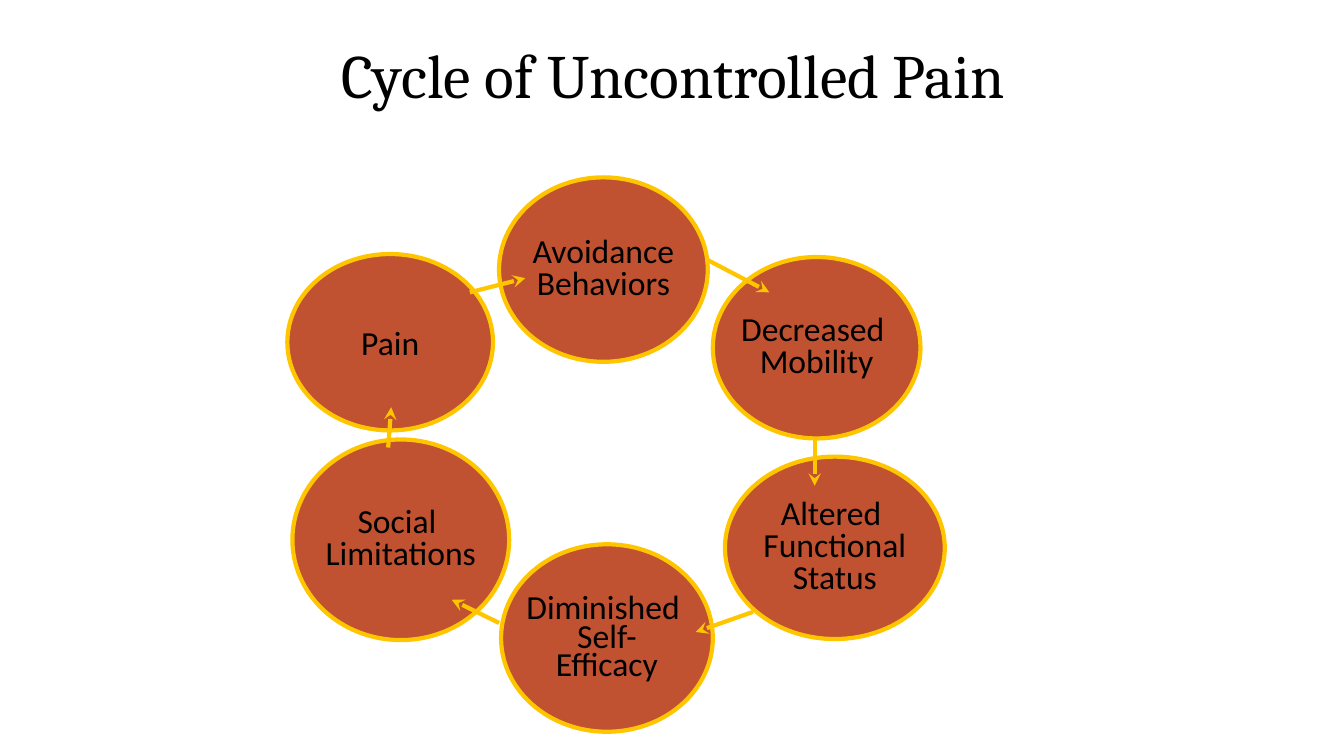
"""Build the slide that shows the cycle of uncontrolled pain."""
import pptx
import pptx.util
import pptx.dml.color
import pptx.enum.shapes
import pptx.enum.text
import lxml.etree

Inches, Pt = pptx.util.Inches, pptx.util.Pt
Color = pptx.dml.color.RGBColor
Align = pptx.enum.text.PP_ALIGN
Anchor = pptx.enum.text.MSO_ANCHOR
Shape = pptx.enum.shapes.MSO_SHAPE
theme = {
    "ink": Color.from_string("000000"),
    "rust": Color.from_string("C05131"),
    "gold": Color.from_string("FFC600"),
    "head": {"name": "Cambria", "size": Pt(44)},
    "body": {"name": "Calibri", "size": Pt(24)},
    "line": Pt(3),
}


def style(para, font, **form):
    """Format one paragraph and its font."""
    for key, value in form.items():
        setattr(para, key, value)
    for run in para.runs:
        for key, value in theme[font].items():
            setattr(run.font, key, value)
        run.font.color.rgb = theme["ink"]


def stroke(line):
    """Give a line the theme colour and width."""
    line.color.rgb = theme["gold"]
    line.width = theme["line"]


deck = pptx.Presentation()
deck.slide_width, deck.slide_height = Inches(13.33), Inches(7.5)
slide = deck.slides.add_slide(deck.slide_layouts[5])

title = slide.shapes.title
place = {"left": 3.29, "top": 0.42, "width": 7.58, "height": 1.45}
for key, value in place.items():
    setattr(title, key, Inches(value))
title.text_frame.text = "Cycle of Uncontrolled Pain\v"
title.text_frame.auto_size = pptx.enum.text.MSO_AUTO_SIZE.NONE
title.text_frame.vertical_anchor = Anchor.MIDDLE
style(title.text_frame.paragraphs[0], "head", alignment=Align.LEFT, line_spacing=0.9)

stages = [
    ("Pain", (2.85, 2.52, 2.04, 1.75), [1.0]),
    ("Altered \nFunctional\nStatus", (7.19, 4.53, 2.18, 1.81), [0.8, 0.8, 0.8]),
    ("Decreased \nMobility", (7.07, 2.55, 2.06, 1.8), [0.8, 0.8]),
    ("Avoidance\nBehaviors", (4.95, 1.76, 2.07, 1.83), [0.8, 0.8]),
    ("Social \nLimitations", (2.9, 4.36, 2.15, 1.99), [0.8, 0.8]),
    ("Diminished \nSelf-\nEfficacy", (4.97, 5.4, 2.1, 1.86), [0.8, 0.7, 0.7]),
]
for label, box, gaps in stages:
    oval = slide.shapes.add_shape(Shape.OVAL, *map(Inches, box))
    oval.shadow.inherit = False
    oval.fill.solid()
    oval.fill.fore_color.rgb = theme["rust"]
    stroke(oval.line)
    frame = oval.text_frame
    frame.word_wrap = False
    frame.vertical_anchor = Anchor.MIDDLE
    frame.text = label
    for para, gap in zip(frame.paragraphs, gaps):
        style(para, "body", alignment=Align.CENTER, line_spacing=gap)

arrows = [
    (7.02, 2.58, 7.63, 2.9),
    (8.08, 4.36, 8.08, 4.82),
    (3.85, 4.44, 3.88, 4.04),
    (4.95, 6.18, 4.48, 5.95),
    (4.66, 2.9, 5.21, 2.76),
    (7.47, 6.07, 6.9, 6.27),
]
for ends in arrows:
    arrow = slide.shapes.add_connector(
        pptx.enum.shapes.MSO_CONNECTOR.STRAIGHT, *map(Inches, ends))
    stroke(arrow.line)
    props = arrow.line._get_or_add_ln()
    tip = lxml.etree.SubElement(props, pptx.oxml.ns.qn("a:tailEnd"))
    tip.set("type", "stealth")
    lxml.etree.SubElement(props.getparent(), pptx.oxml.ns.qn("a:effectLst"))

deck.save("out.pptx")
